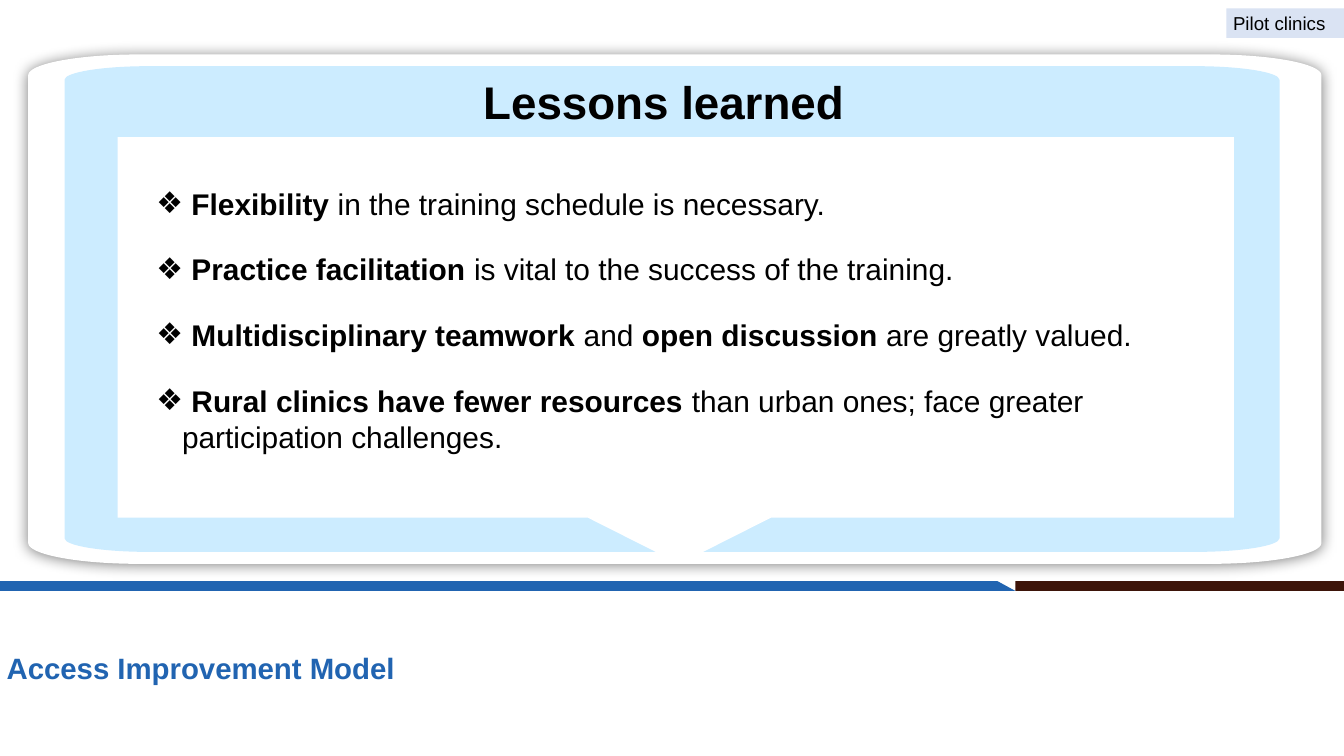
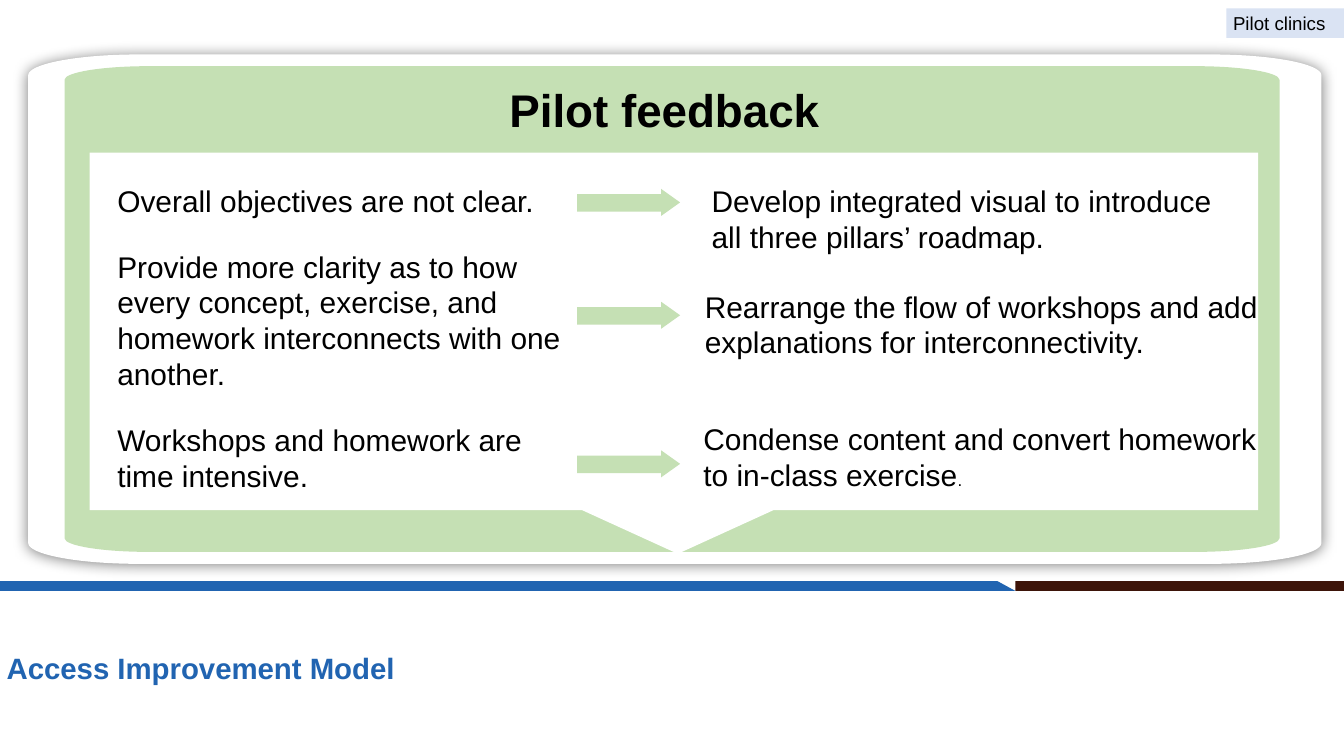
from typing import NamedTuple

from lxml import etree
from pptx import Presentation
from pptx.dml.color import RGBColor
from pptx.enum.shapes import MSO_SHAPE
from pptx.enum.text import MSO_ANCHOR, PP_ALIGN
from pptx.oxml.ns import qn
from pptx.util import Pt

RECTANGLE = MSO_SHAPE.RECTANGLE
TOP, MIDDLE = MSO_ANCHOR.TOP, MSO_ANCHOR.MIDDLE
LEFT, CENTER = PP_ALIGN.LEFT, PP_ALIGN.CENTER

BLACK = RGBColor(0x00, 0x00, 0x00)
WHITE = RGBColor(0xFF, 0xFF, 0xFF)
BLUE = RGBColor(0x21, 0x64, 0xB1)
BROWN = RGBColor(0x3D, 0x14, 0x09)
LAVENDER = RGBColor(0xDA, 0xE3, 0xF3)
SKY = RGBColor(0xCC, 0xEC, 0xFF)
GREEN = RGBColor(0xC5, 0xE0, 0xB4)

FONT = "Arial"
BODY_SIZE = 32
BODY_GAP = Pt(32)
WIDE_INSET = (14.4, 14.4)
SLIM_INSET = (7.2, 3.6)
ROUNDNESS = 0.55


class Box(NamedTuple):
    left: float
    top: float
    width: float
    height: float

    def inner(self, left, top, width, height):
        return Box(self.left + left, self.top + top, width, height)

    def lengths(self):
        return [Pt(value) for value in self]


PAGE = Box(0, 0, 1440, 810)
PANEL = Box(30.2, 58.3, 1385.6, 545.8)
FOOTER = Box(0, 622.6, 1440, 187.4)
TAG = Box(1314, 8.9, 126, 31.7)


def paint(shape, color):
    shape.fill.solid()
    shape.fill.fore_color.rgb = color
    shape.line.fill.background()
    shape.shadow.inherit = False
    return shape


def add_outline(page, points, color):
    corners = [(Pt(x), Pt(y)) for x, y in points]
    builder = page.shapes.build_freeform(*corners[0])
    builder.add_line_segments(corners[1:], close=True)
    return paint(builder.convert_to_shape(), color)


def add_rounded(page, box, radius_x, radius_y, color):
    left, top = box.left, box.top
    right, bottom = left + box.width, top + box.height
    corners = [(left, top, 1, 1), (left, bottom, 1, -1),
               (right, bottom, -1, -1), (right, top, -1, 1)]
    points = []
    for index, (x, y, side_x, side_y) in enumerate(corners):
        reach_x, reach_y = side_x * radius_x, side_y * radius_y
        curve = [(x + reach_x, y), (x + reach_x * (1 - ROUNDNESS), y),
                 (x, y + reach_y * (1 - ROUNDNESS)), (x, y + reach_y)]
        points += reversed(curve) if index % 2 else curve
    shape = add_outline(page, points, color)
    lines = list(shape._element.iter(qn("a:lnTo")))
    for start in range(0, len(points) - 1, 4):
        bends = lines[start:start + 3]
        curve = etree.Element(qn("a:cubicBezTo"))
        bends[0].addprevious(curve)
        for bend in bends:
            curve.append(bend[0])
            bend.getparent().remove(bend)
    return shape


def write(frame, paragraphs, size=BODY_SIZE, color=BLACK, bold=False,
          inset=SLIM_INSET, anchor=TOP, align=LEFT, gap=Pt(0)):
    across, down = (Pt(value) for value in inset)
    frame_format = {
        "word_wrap": True, "vertical_anchor": anchor,
        "margin_left": across, "margin_right": across,
        "margin_top": down, "margin_bottom": down,
    }
    for name, value in frame_format.items():
        setattr(frame, name, value)
    for index, spans in enumerate(paragraphs):
        para = frame.add_paragraph() if index else frame.paragraphs[0]
        para.alignment, para.space_after = align, gap
        for text, changes in spans:
            span = para.add_run()
            span.text = text
            font_format = {"name": FONT, "size": Pt(size), "bold": bold}
            for name, value in {**font_format, **changes}.items():
                setattr(span.font, name, value)
            span.font.color.rgb = color


def add_text(page, box, paragraphs, **style):
    frame = page.shapes.add_textbox(*box.lengths()).text_frame
    write(frame, paragraphs, **style)
    return frame


def add_bar(page, box, color):
    return paint(page.shapes.add_shape(RECTANGLE, *box.lengths()), color)


def strong(text):
    return text, {"bold": True}


def regular(text):
    return text, {}


def plain(text):
    return [regular(text)]


def add_bullets(frame):
    indent = Pt(27.4)
    for para in frame.paragraphs:
        properties = para._p.get_or_add_pPr()
        properties.set("marL", str(indent))
        properties.set("indent", str(-indent))
        etree.SubElement(properties, qn("a:buFont"), typeface=FONT)
        etree.SubElement(properties, qn("a:buChar"), char="❖")


def add_glow(shape):
    effects = shape._element.spPr.find(qn("a:effectLst"))
    shadow = etree.SubElement(
        effects, qn("a:outerShdw"), blurRad=str(Pt(15.8)), dist=str(Pt(1.5)),
        dir="5400000", algn="ctr", rotWithShape="0")
    color = etree.SubElement(shadow, qn("a:srgbClr"), val=str(BLACK))
    etree.SubElement(color, qn("a:alpha"), val="50000")


def add_panel(page, box, color):
    add_glow(add_rounded(page, box, 118.4, 22.3, WHITE))
    add_rounded(page, box.inner(38.9, 12.6, 1301.8, 520.4), 90, 14.6, color)


def add_callout(page, box, tip, half_width, depth):
    right, bottom = box.left + box.width, box.top + box.height
    points = [
        (box.left, box.top), (box.left, bottom), (tip - half_width, bottom),
        (tip, bottom + depth), (tip + half_width, bottom),
        (right, bottom), (right, box.top),
    ]
    add_outline(page, points, WHITE)


def add_arrow(page, box):
    right, bottom = box.left + box.width, box.top + box.height
    neck, shaft_top, shaft_bottom = right - 20.2, box.top + 5.6, bottom - 4.4
    points = [
        (box.left, shaft_bottom), (neck, shaft_bottom), (neck, bottom),
        (right, box.top + box.height / 2),
        (neck, box.top), (neck, shaft_top), (box.left, shaft_top),
    ]
    add_outline(page, points, GREEN)


def add_title(page, box, text):
    add_text(page, box, [plain(text)], size=49, bold=True,
             inset=WIDE_INSET, anchor=MIDDLE, align=CENTER)


def add_footer(page, box):
    add_bar(page, box.inner(1088, 0, 352, 10.6), BROWN)
    add_text(page, box.inner(0, 70, 602, 45.4), [plain("Access Improvement Model")],
             size=31.5, color=BLUE, bold=True)
    start, end, bottom = box.left - 5, box.left + 1088, box.top + 10.6
    add_outline(page, [(start, bottom), (end, bottom),
                       (end - 19.4, box.top), (start, box.top)], BLUE)


def add_tag(page, box):
    write(add_bar(page, box, LAVENDER).text_frame, [plain("Pilot clinics")], size=20)


def add_page(deck, color):
    page = deck.slides.add_slide(deck.slide_layouts[6])
    add_footer(page, FOOTER)
    add_panel(page, PANEL, color)
    return page


def add_lessons(page, box):
    add_callout(page, box.inner(95.8, 88.6, 1196, 407.8), 728, 98, 49.4)
    add_title(page, box.inner(309.6, 6, 742.3, 88.6), "Lessons learned")
    lessons = [
        [regular(" "), strong("Flexibility"),
         regular(" in the training schedule is necessary.")],
        [strong(" Practice facilitation "),
         regular("is vital to the success of the training.")],
        [strong(" Multidisciplinary teamwork "), regular("and "),
         strong("open discussion "), regular("are greatly valued.")],
        [strong(" Rural clinics have fewer resources "),
         regular("than urban ones; face greater participation challenges.")],
    ]
    frame = add_text(page, box.inner(123, 125.8, 1160.6, 221), lessons,
                     inset=WIDE_INSET, gap=BODY_GAP)
    add_bullets(frame)
    add_tag(page, TAG)


def add_feedback(page, box):
    add_callout(page, box.inner(65.8, 105.3, 1252.1, 383), 726.2, 102.6, 46.8)
    add_title(page, box.inner(310.4, 14.4, 742.3, 88.6), "Pilot feedback")
    remarks = [
        "Overall objectives are not clear.",
        "Provide more clarity as to how every concept, exercise, and homework "
        "interconnects with one another.",
        "Workshops and homework are time intensive.",
    ]
    add_text(page, box.inner(81.1, 122.9, 506.9, 162), [plain(text) for text in remarks],
             inset=WIDE_INSET, gap=BODY_GAP)
    add_tag(page, TAG)
    responses = [
        ((717.9, 122.9, 583.2, 162), WIDE_INSET,
         plain("Develop integrated visual to introduce all three pillars’ roadmap.")),
        ((717.9, 247, 629.3, 106.6), SLIM_INSET,
         plain("Rearrange the flow of workshops and add explanations for interconnectivity.")),
        ((716.4, 388.8, 622.8, 106.6), SLIM_INSET,
         [regular("Condense content and convert homework to in-class exercise"),
          (".", {"size": Pt(18)})]),
    ]
    for place, inset, spans in responses:
        add_text(page, box.inner(*place), [spans], inset=inset)
    for top in (144.2, 265.1, 424.3):
        add_arrow(page, box.inner(588.3, top, 110.2, 28.8))


def main():
    deck = Presentation()
    deck.slide_width, deck.slide_height = Pt(PAGE.width), Pt(PAGE.height)
    for color, add_content in ((SKY, add_lessons), (GREEN, add_feedback)):
        add_content(add_page(deck, color), PANEL)
    deck.save("out.pptx")


if __name__ == "__main__":
    main()
